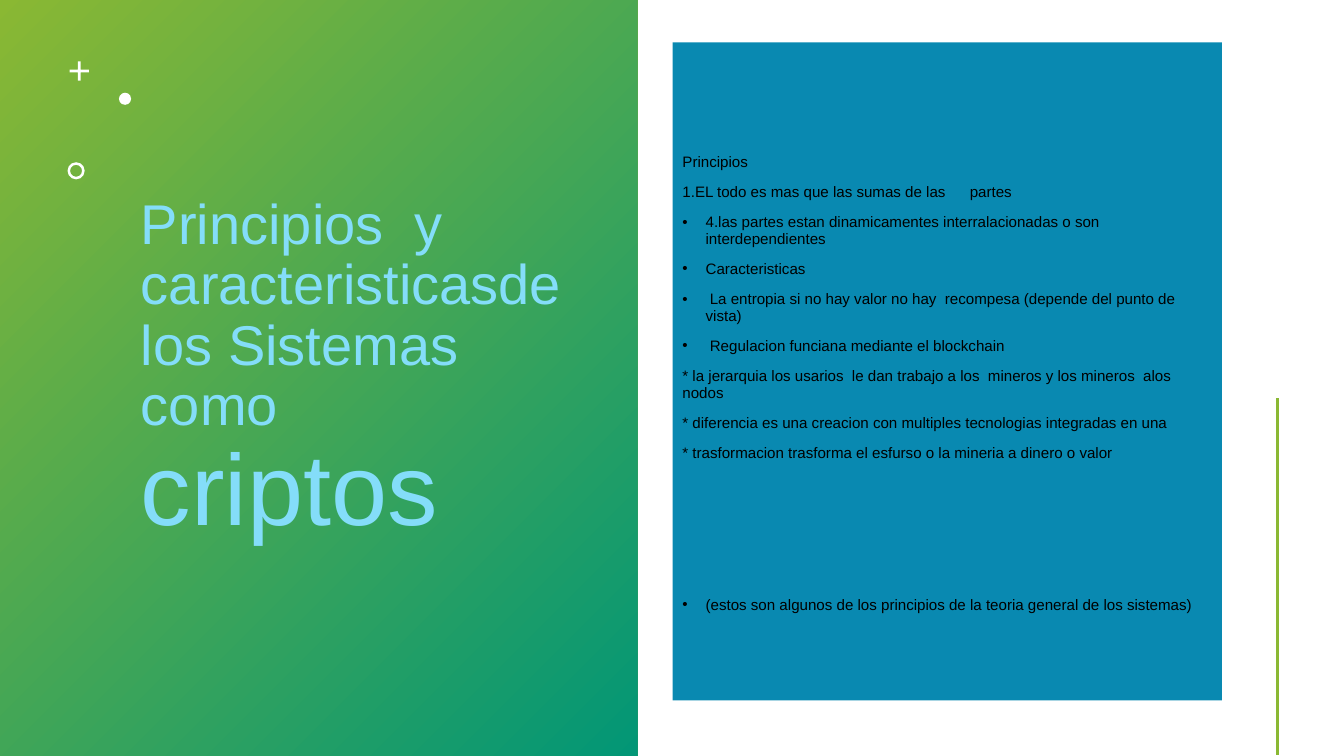
from lxml.etree import SubElement
from pptx import Presentation
from pptx.dml.color import RGBColor
from pptx.enum.shapes import MSO_CONNECTOR as Connector, MSO_SHAPE as Preset
from pptx.enum.text import MSO_ANCHOR as Anchor, PP_ALIGN as Align
from pptx.oxml.ns import qn
from pptx.util import Inches, Pt

PRINCIPLES = [
    ("Principios", False),
    ("1.EL todo es mas que las sumas de las\tpartes", False),
    ("4.las partes estan dinamicamentes interralacionadas o son interdependientes", True),
    ("Caracteristicas", True),
    (" La entropia si no hay valor no hay  recompesa (depende del punto de vista)", True),
    (" Regulacion funciana mediante el blockchain", True),
    ("* la jerarquia los usarios  le dan trabajo a los  mineros y los mineros  alos nodos", False),
    ("* diferencia es una creacion con multiples tecnologias integradas en una", False),
    ("* trasformacion trasforma el esfurso o la mineria a dinero o valor", False),
    ("(estos son algunos de los principios de la teoria general de los sistemas)", True),
]


def color(hex_code):
    """Turn a hex string into a colour."""
    return RGBColor.from_string(hex_code)


def add_preset(slide, preset, box, fill=None):
    """Add a borderless, shadowless preset shape in a box given in inches."""
    shape = slide.shapes.add_shape(preset, *map(Inches, box))
    shape.shadow.inherit = False
    shape.line.fill.background()
    if fill:
        shape.fill.solid()
        shape.fill.fore_color.rgb = color(fill)
    return shape


def style_run(run, size, hex_code):
    """Apply the slide font to a run."""
    run.font.name = "Arial"
    run.font.size = Pt(size)
    run.font.color.rgb = color(hex_code)


def add_ornaments(slide, left, top):
    """Draw the white plus, dot and ring from a top left corner."""
    ornaments = [
        (Preset.CROSS, 0.02, 0, 0.19, 0.43),
        (Preset.OVAL, 0.51, 0.31, 0.12, None),
        (Preset.DONUT, 0, 1, 0.17, 0.15),
    ]
    for preset, dx, dy, size, adjustment in ornaments:
        ornament = add_preset(slide, preset, (left + dx, top + dy, size, size), "FFFFFF")
        if adjustment:
            ornament.adjustments[0] = adjustment


def add_title_panel(slide, left, top, width, height):
    """Draw the gradient panel with its ornaments and title."""
    panel = add_preset(slide, Preset.RECTANGLE, (left, top, width, height))
    panel.fill.gradient()
    panel.fill.gradient_angle = 315
    for stop, hex_code in zip(panel.fill.gradient_stops, ("8AB833", "029676")):
        stop.color.rgb = color(hex_code)
    add_ornaments(slide, left + 0.67, top + 0.61)

    title_box = (left + 1.3, top + 0.42, 4.38, height - 0.97)
    title = slide.shapes.add_textbox(*map(Inches, title_box)).text_frame
    title.word_wrap = True
    title.vertical_anchor = Anchor.MIDDLE
    title.text = "Principios  y caracteristicasde los Sistemas como \vcriptos"
    heading = title.paragraphs[0]
    heading.line_spacing = 0.9
    for run, size in zip(heading.runs, (40, 72)):
        style_run(run, size, "84DDF9")


def add_bullet(paragraph):
    """Give a paragraph a hanging black bullet."""
    properties = paragraph._p.get_or_add_pPr()
    properties.set("marL", str(Inches(0.23)))
    properties.set("indent", str(-Inches(0.23)))
    bullet_color = SubElement(properties, qn("a:buClr"))
    SubElement(bullet_color, qn("a:srgbClr"), val="000000")
    SubElement(properties, qn("a:buFont"), typeface="Arial")
    SubElement(properties, qn("a:buChar"), char="•")


def add_tab_stop(paragraph, position):
    """Set a left tab stop, in inches from the text edge."""
    stops = SubElement(paragraph._p.get_or_add_pPr(), qn("a:tabLst"))
    SubElement(stops, qn("a:tab"), pos=str(Inches(position)), algn="l")


def add_principles_panel(slide, left, top, width, height):
    """Draw the blue panel with the list of principles."""
    panel = add_preset(slide, Preset.RECTANGLE, (left, top, width, height), "0989B1")
    principles = panel.text_frame
    principles.word_wrap = True
    principles.vertical_anchor = Anchor.TOP
    principles.margin_top = Inches(1.11)
    principles.text = "\n".join(text for text, _ in PRINCIPLES)
    for paragraph, (text, bulleted) in zip(principles.paragraphs, PRINCIPLES):
        paragraph.alignment = Align.LEFT
        paragraph.line_spacing = 0.9
        paragraph.space_before = Pt(10)
        if bulleted:
            add_bullet(paragraph)
        if "\t" in text:
            add_tab_stop(paragraph, 2.85)
        for run in paragraph.runs:
            style_run(run, 10.8, "000000")
    principles.paragraphs[0].space_before = Pt(0)
    principles.paragraphs[-1].space_before = Pt(96.5)


def add_accent_line(slide, left, top, height):
    """Draw the green vertical line."""
    ends = map(Inches, (left, top, left, top + height))
    accent = slide.shapes.add_connector(Connector.STRAIGHT, *ends)
    accent.line.color.rgb = color("8AB833")
    accent.line.width = Pt(2)
    SubElement(accent._element.spPr, qn("a:effectLst"))


def main():
    """Build and save the slide."""
    deck = Presentation()
    deck.slide_width, deck.slide_height = Inches(13.33), Inches(7.5)
    slide = deck.slides.add_slide(deck.slide_layouts[6])
    add_title_panel(slide, 0, 0, 6.32, 7.5)
    add_principles_panel(slide, 6.67, 0.42, 5.45, 6.53)
    add_accent_line(slide, 12.67, 3.95, 3.54)
    deck.save("out.pptx")


if __name__ == "__main__":
    main()
